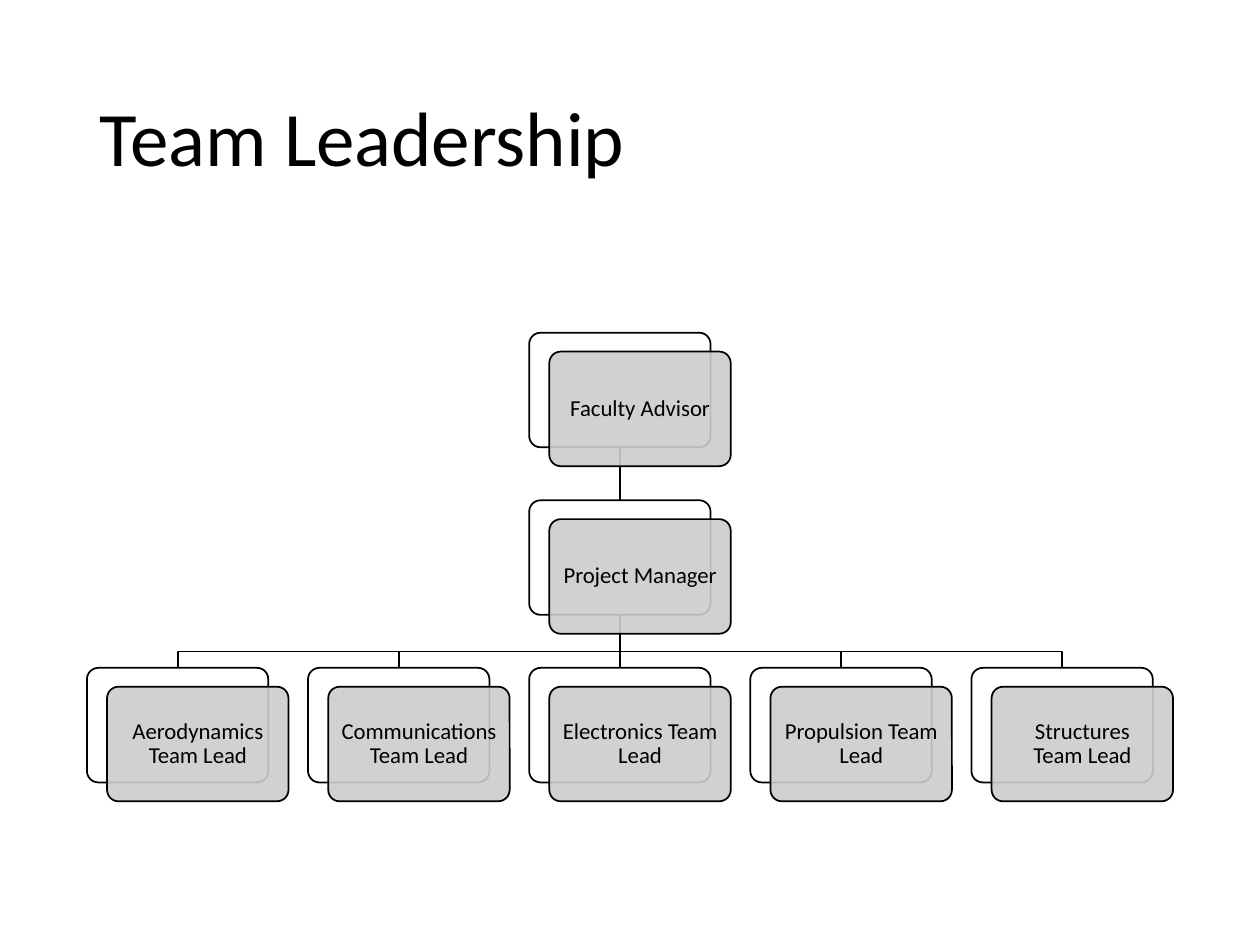
import pptx
import pptx.util
import pptx.dml.color
import pptx.enum.shapes
import pptx.enum.text
import pptx.oxml
import pptx.oxml.ns
from pptx.util import Inches

TITLE = "Team Leadership"
CHAIN = ["Faculty Advisor", "Project Manager"]
LEADS = [
    "Aerodynamics Team Lead",
    "Communications Team Lead",
    "Electronics Team Lead",
    "Propulsion Team Lead",
    "Structures\vTeam Lead",
]
THEME = {
    "font": "Calibri",
    "title": pptx.util.Pt(44),
    "label": pptx.util.Pt(13),
    "after": pptx.util.Pt(4.5),
    "line": pptx.util.Pt(1),
    "ink": pptx.dml.color.RGBColor(0x00, 0x00, 0x00),
    "back": pptx.dml.color.RGBColor(0xFF, 0xFF, 0xFF),
    "front": pptx.dml.color.RGBColor(0xCC, 0xCC, 0xCC),
}
LEFT, RIGHT, TOP = 0.69, 7.71, 2.64
CARD_W, CARD_H = 1.44, 0.91
SHIFT_X, SHIFT_Y = 0.16, 0.15
ROW_PITCH = 1.33
COL_PITCH = (RIGHT - LEFT) / (len(LEADS) - 1)
MIDDLE = len(LEADS) // 2
BEND_Y = 5.17


def style_line(shape):
    shape.line.color.rgb = THEME["ink"]
    shape.line.width = THEME["line"]


def write(p, text, size):
    p.text = text
    p.line_spacing = 0.9
    p.font.name = THEME["font"]
    p.font.size = size
    p.font.color.rgb = THEME["ink"]


def add_card(s, x, y, color):
    card = s.shapes.add_shape(
        pptx.enum.shapes.MSO_SHAPE.ROUNDED_RECTANGLE,
        Inches(x), Inches(y), Inches(CARD_W), Inches(CARD_H))
    card.adjustments[0] = 0.1
    card.shadow.inherit = False
    card.fill.solid()
    card.fill.fore_color.rgb = color
    style_line(card)
    return card


def add_front(s, x, y, text):
    card = add_card(s, x + SHIFT_X, y + SHIFT_Y, THEME["front"])
    clr = card.fill._xPr.find(".//" + pptx.oxml.ns.qn("a:srgbClr"))
    clr.append(pptx.oxml.parse_xml(
        f'<a:alpha {pptx.oxml.ns.nsdecls("a")} val="90000"/>'))
    tf = card.text_frame
    tf.word_wrap = True
    tf.vertical_anchor = pptx.enum.text.MSO_ANCHOR.MIDDLE
    tf.margin_left = tf.margin_right = Inches(0.05)
    tf.margin_top = tf.margin_bottom = Inches(0.05)
    p = tf.paragraphs[0]
    write(p, text, THEME["label"])
    p.alignment = pptx.enum.text.PP_ALIGN.CENTER
    p.space_after = THEME["after"]


def join_straight(s, upper, lower):
    link = s.shapes.add_connector(
        pptx.enum.shapes.MSO_CONNECTOR.STRAIGHT, 0, 0, 0, 0)
    link.begin_connect(upper, 2)
    link.end_connect(lower, 0)
    style_line(link)
    link._element.spPr.append(pptx.oxml.parse_xml(
        f'<a:effectLst {pptx.oxml.ns.nsdecls("a")}/>'))


def join_elbow(s, upper, lower):
    x1, x2 = (c.left + c.width // 2 for c in (upper, lower))
    bend = Inches(BEND_Y)
    builder = s.shapes.build_freeform(x1, upper.top + upper.height)
    builder.add_line_segments(
        [(x1, bend), (x2, bend), (x2, lower.top)], close=False)
    elbow = builder.convert_to_shape()
    elbow.fill.background()
    elbow.shadow.inherit = False
    style_line(elbow)


def main():
    prs = pptx.Presentation()
    prs.slide_width, prs.slide_height = Inches(10), Inches(7.5)
    s = prs.slides.add_slide(prs.slide_layouts[6])

    title = s.shapes.add_textbox(
        Inches(0.69), Inches(0.4), Inches(8.62), Inches(1.45))
    tf = title.text_frame
    tf.word_wrap = True
    tf.vertical_anchor = pptx.enum.text.MSO_ANCHOR.MIDDLE
    write(tf.paragraphs[0], TITLE, THEME["title"])

    nodes = [(text, MIDDLE, row) for row, text in enumerate(CHAIN)]
    nodes += [(text, col, len(CHAIN)) for col, text in enumerate(LEADS)]
    places = [(LEFT + col * COL_PITCH, TOP + row * ROW_PITCH, text)
              for text, col, row in nodes]

    backs = [add_card(s, x, y, THEME["back"]) for x, y, text in places]
    advisor, manager, *leads = backs
    join_straight(s, advisor, manager)
    for col, lead in enumerate(leads):
        join = join_straight if col == MIDDLE else join_elbow
        join(s, manager, lead)
    for x, y, text in places:
        add_front(s, x, y, text)

    prs.save("out.pptx")


if __name__ == "__main__":
    main()
